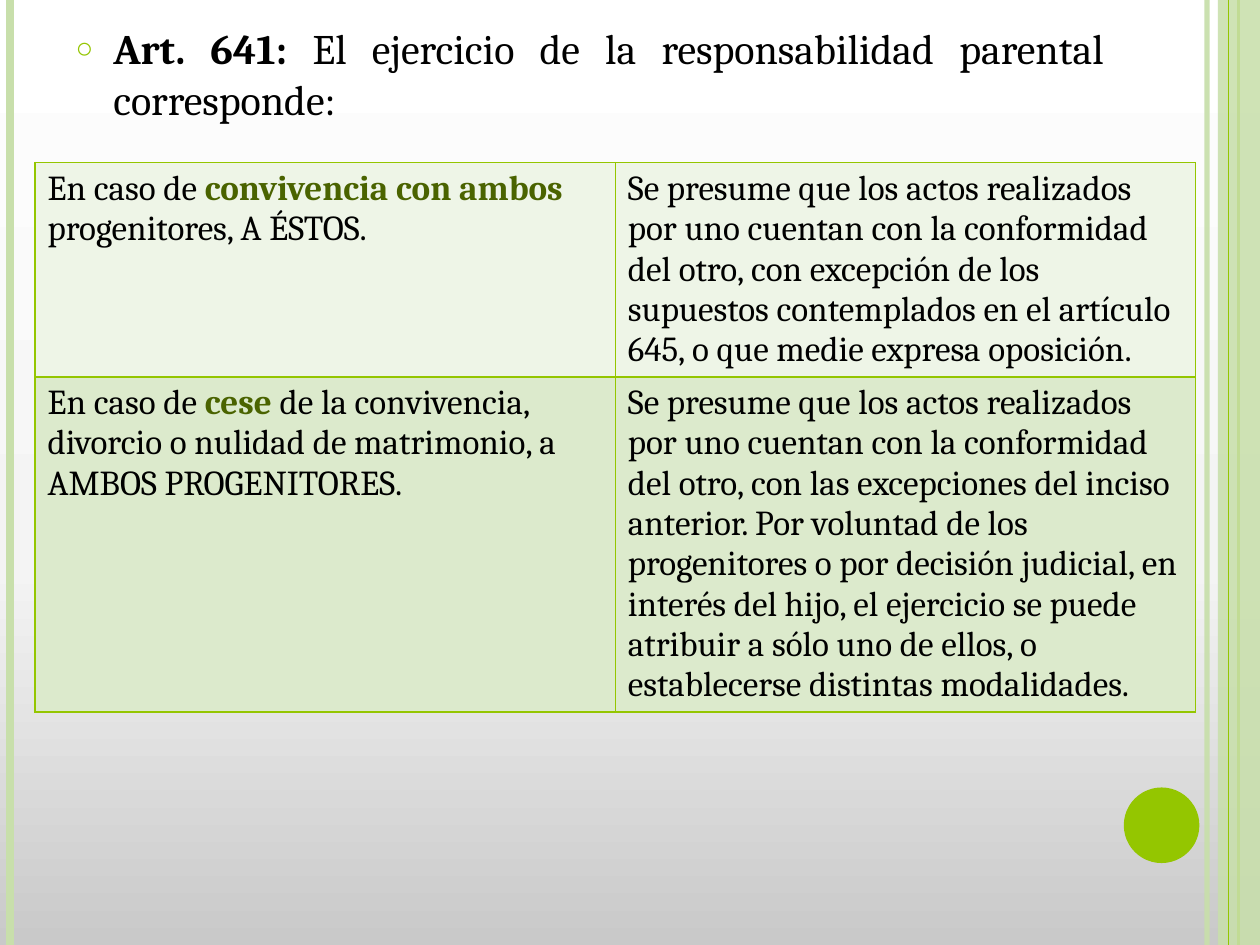
from copy import deepcopy

from lxml.etree import SubElement
from pptx import Presentation
from pptx.dml.color import RGBColor as RGB
from pptx.enum.shapes import MSO_CONNECTOR as CONN, MSO_SHAPE as SHAPE
from pptx.enum.text import MSO_AUTO_SIZE as AUTO, PP_ALIGN as ALIGN
from pptx.oxml.ns import qn
from pptx.util import Pt

W, H = 720, 540
FONT = "Cambria"
COLORS = {"green": "94C600", "pale": "C8DFAB", "dark": "4A6300", "black": "000000",
          "row1": "EEF5E7", "row2": "DCEACC"}
BACKGROUND = [(0, "C9C9C9"), (0.4, "F4F4F4"), (1, "FFFFFF")]

# Each run is (text, is emphasised)
HEADING = [("Art. 641: ", True),
           ("El ejercicio de la responsabilidad parental corresponde:", False)]
ROWS = [
    ("row1", 122, [
        [("En caso de ", False), ("convivencia con ambos", True),
         (" progenitores, A ÉSTOS.", False)],
        [("Se presume que los actos realizados por uno cuentan con la conformidad del otro, "
          "con excepción de los supuestos contemplados en el artículo 645, o que medie "
          "expresa oposición.", False)]]),
    ("row2", 191, [
        [("En caso de ", False), ("cese", True),
         (" de la convivencia, divorcio o nulidad de matrimonio, a AMBOS PROGENITORES.", False)],
        [("Se presume que los actos realizados por uno cuentan con la conformidad del otro, "
          "con las excepciones del inciso anterior. Por voluntad de los progenitores o por "
          "decisión judicial, en interés del hijo, el ejercicio se puede atribuir a sólo uno "
          "de ellos, o establecerse distintas modalidades.", False)]]),
]

# Drawn from back to front: x, width, colour, opacity in percent
BACK_LINES = [(689.8, 3, "pale", 93), (5.8, 4.5, "pale", 100), (707.8, 1.5, "green", 100)]
FRONT_LINES = [(702, 0.75, "green", 100)]


def rgb(name):
    return RGB.from_string(COLORS[name])


def set_opacity(parent, percent):
    if percent < 100:
        color = parent.find(".//" + qn("a:srgbClr"))
        SubElement(color, qn("a:alpha"), val=str(percent * 1000))


def paint_background(s):
    fill = s.background.fill
    fill.gradient()
    fill.gradient_angle = 90
    first = s.element.find(".//" + qn("a:gs"))
    first.addnext(deepcopy(first))
    for stop, (pos, color) in zip(fill.gradient_stops, BACKGROUND):
        stop.position = pos
        stop.color.rgb = RGB.from_string(color)


def add_lines(s, lines):
    for x, width, color, opacity in lines:
        c = s.shapes.add_connector(CONN.STRAIGHT, Pt(x), Pt(0), Pt(x), Pt(H))
        c.line.width = Pt(width)
        c.line.color.rgb = rgb(color)
        sp_pr = c.element.spPr
        set_opacity(sp_pr, opacity)
        SubElement(sp_pr, qn("a:effectLst"))


def add_solid(s, kind, box, color, opacity=100):
    sp = s.shapes.add_shape(kind, *map(Pt, box))
    sp.shadow.inherit = False
    sp.fill.solid()
    sp.fill.fore_color.rgb = rgb(color)
    sp.line.fill.background()
    set_opacity(sp.element.spPr, opacity)


def add_runs(p, runs, size, accent):
    for text, strong in runs:
        r = p.add_run()
        r.text = text
        r.font.name = FONT
        r.font.size = Pt(size)
        r.font.bold = strong
        r.font.color.rgb = rgb(accent if strong else "black")


def fill_heading(sp):
    sp.left, sp.top, sp.width, sp.height = map(Pt, (36, 9.4, 602, 500))
    tf = sp.text_frame
    tf.word_wrap = True
    tf.auto_size = AUTO.NONE
    p = tf.paragraphs[0]
    p.alignment = ALIGN.JUSTIFY
    p.space_before = Pt(6)
    add_runs(p, HEADING, 24, "black")
    p_pr = p._p.get_or_add_pPr()
    p_pr.set("marL", str(Pt(21.6)))
    p_pr.set("indent", str(-Pt(21.6)))
    SubElement(SubElement(p_pr, qn("a:buClr")), qn("a:srgbClr"), val=COLORS["green"])
    SubElement(p_pr, qn("a:buSzPct"), val="70000")
    SubElement(p_pr, qn("a:buChar"), char="○")


def add_borders(cell):
    tc_pr = cell._tc.get_or_add_tcPr()
    for i, side in enumerate(("lnL", "lnR", "lnT", "lnB")):
        ln = tc_pr.makeelement(qn("a:" + side), {"w": str(Pt(1))})
        SubElement(SubElement(ln, qn("a:solidFill")), qn("a:srgbClr"), val=COLORS["green"])
        tc_pr.insert(i, ln)


def add_cases_table(s):
    height = sum(row[1] for row in ROWS)
    table = s.shapes.add_table(len(ROWS), 2, Pt(20), Pt(92.9), Pt(663.2), Pt(height)).table
    for row, (color, row_height, texts) in zip(table.rows, ROWS):
        row.height = Pt(row_height)
        for cell, runs in zip(row.cells, texts):
            cell.fill.solid()
            cell.fill.fore_color.rgb = rgb(color)
            add_borders(cell)
            add_runs(cell.text_frame.paragraphs[0], runs, 20, "dark")


def main():
    prs = Presentation()
    prs.slide_width, prs.slide_height = Pt(W), Pt(H)
    s = prs.slides.add_slide(prs.slide_layouts[1])
    title, body = s.placeholders
    tree = body.element.getparent()
    tree.remove(title.element)

    paint_background(s)
    add_lines(s, BACK_LINES)
    add_solid(s, SHAPE.RECTANGLE, (696, 0, 24, H), "pale", 87)
    add_lines(s, FRONT_LINES)
    add_solid(s, SHAPE.OVAL, (642.2, 450, 43.2, 43.2), "green")
    fill_heading(body)
    tree.append(body.element)
    add_cases_table(s)
    prs.save("out.pptx")


if __name__ == "__main__":
    main()
